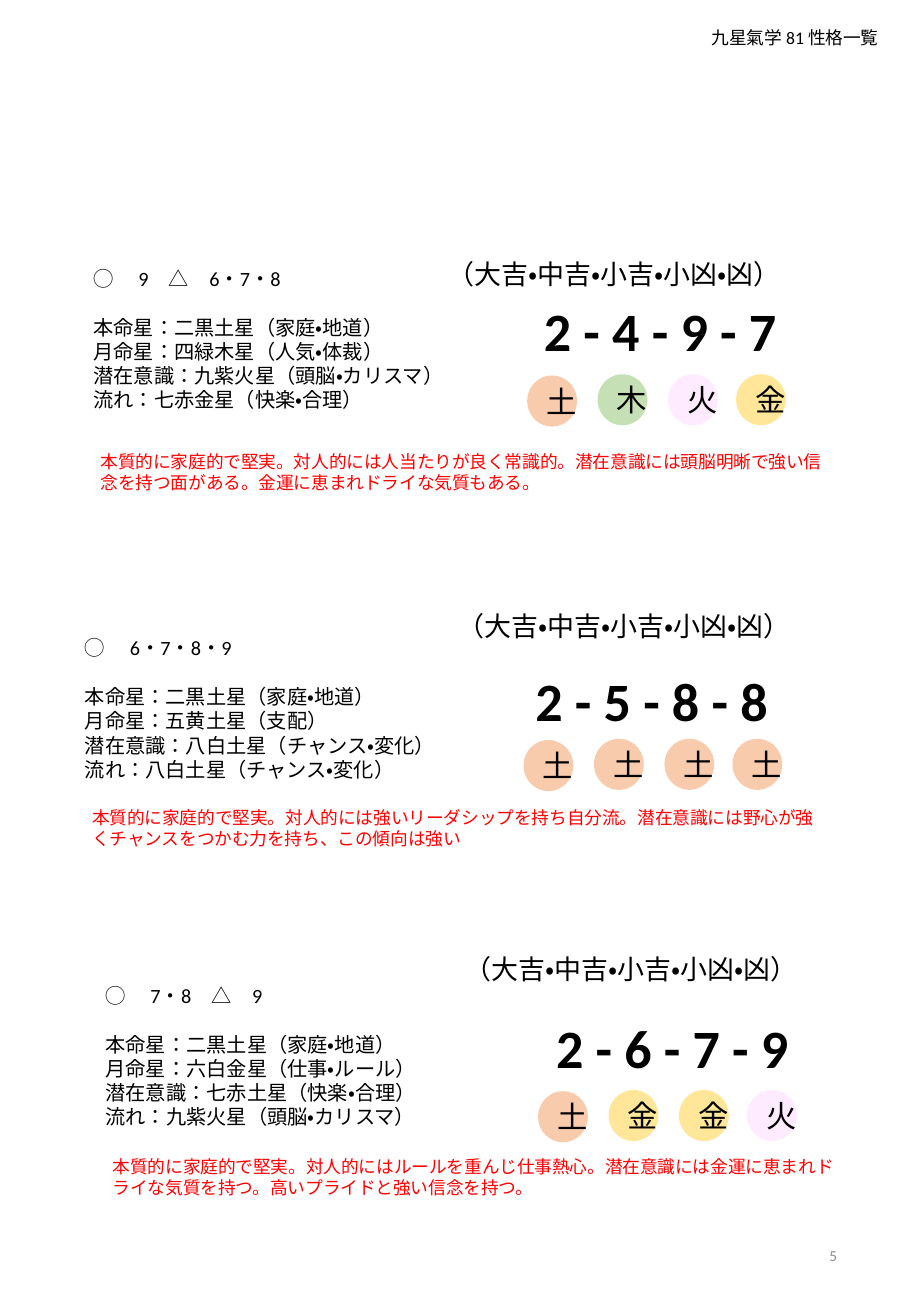
from collections import namedtuple

from pptx import Presentation
from pptx.dml.color import RGBColor
from pptx.enum.lang import MSO_LANGUAGE_ID as Language
from pptx.enum.shapes import MSO_SHAPE as Preset
from pptx.enum.text import MSO_ANCHOR as Anchor, MSO_AUTO_SIZE as AutoSize, PP_ALIGN as Align
from pptx.util import Emu, Pt

PX = 9144
BLACK = RGBColor(0x00, 0x00, 0x00)
RED = RGBColor(0xFF, 0x00, 0x00)
GRAY = RGBColor(0x8C, 0x8C, 0x8C)
ELEMENT_COLORS = {
    "土": RGBColor(0xF8, 0xCB, 0xAD),
    "木": RGBColor(0xC5, 0xE0, 0xB4),
    "火": RGBColor(0xFE, 0xEB, 0xFF),
    "金": RGBColor(0xFF, 0xE6, 0x99),
}
CIRCLE_OFFSETS = ((0, 1), (58, 0), (116, 0), (172, 0))
LUCK = "（大吉・中吉・小吉・小凶・凶）"

Reading = namedtuple("Reading", "left top luck_at circles_at summary_top match stars numbers elements summary")

READINGS = (
    Reading(
        67, 214, (359, 207), (434, 308), 366,
        "◯　 9　△　6・7・8",
        ("本命星：二黒土星（家庭・地道）", "月命星：四緑木星（人気・体裁）",
         "潜在意識：九紫火星（頭脳・カリスマ）", "流れ：七赤金星（快楽・合理）"),
        "2 - 4 - 9 - 7", "土木火金",
        "本質的に家庭的で堅実。対人的には人当たりが良く常識的。潜在意識には頭脳明晰で強い信念を持つ面がある。"
        "金運に恵まれドライな気質もある。",
    ),
    Reading(
        60, 518, (367, 497), (431, 608), 659,
        "◯　 6・7・8・9",
        ("本命星：二黒土星（家庭・地道）", "月命星：五黄土星（支配）",
         "潜在意識：八白土星（チャンス・変化）", "流れ：八白土星（チャンス・変化）"),
        "2 - 5 - 8 - 8", "土土土土",
        "本質的に家庭的で堅実。対人的には強いリーダシップを持ち自分流。潜在意識には野心が強くチャンスをつかむ力を持ち、"
        "この傾向は強い",
    ),
    Reading(
        77, 804, (373, 779), (443, 897), 946,
        "◯　 7・8　△　9",
        ("本命星：二黒土星（家庭・地道）", "月命星：六白金星（仕事・ルール）",
         "潜在意識：七赤土星（快楽・合理）", "流れ：九紫火星（頭脳・カリスマ）"),
        "2 - 6 - 7 - 9", "土金金火",
        "本質的に家庭的で堅実。対人的にはルールを重んじ仕事熱心。潜在意識には金運に恵まれドライな気質を持つ。"
        "高いプライドと強い信念を持つ。",
    ),
)


def px(*lengths):
    return [Emu(length * PX) for length in lengths]


def write(para, text, size, color=BLACK, bold=False, align=Align.LEFT):
    para.alignment = align
    span = para.add_run()
    span.text = text
    font = span.font
    font.name = "Calibri"
    font.size = Pt(size)
    font.bold = bold
    font.color.rgb = color
    font.language_id = Language.JAPANESE


def add_text(shapes, area, lines, size, color=BLACK, bold=False, align=Align.LEFT, anchor=Anchor.TOP):
    box = shapes.add_textbox(*px(*area))
    frame = box.text_frame
    frame.word_wrap = True
    frame.vertical_anchor = anchor
    for index, line in enumerate(lines):
        para = frame.add_paragraph() if index else frame.paragraphs[0]
        write(para, line, size, color, bold, align)
    return box


def add_circle(shapes, left, top, element):
    circle = shapes.add_shape(Preset.OVAL, *px(left, top, 41, 42))
    circle.shadow.inherit = False
    circle.fill.solid()
    circle.fill.fore_color.rgb = ELEMENT_COLORS[element]
    circle.line.fill.background()
    circle.text_frame.vertical_anchor = Anchor.MIDDLE
    write(circle.text_frame.paragraphs[0], element, 18, align=Align.CENTER)


def add_reading(page, reading):
    shapes = page.shapes.add_group_shape().shapes
    left, top = reading.left, reading.top
    profile = add_text(shapes, (left, top, 335, 131), (reading.match, *reading.stars), 12)
    profile.text_frame.paragraphs[0].space_after = Pt(14.5)
    add_text(shapes, (left + 371, top + 26, 252, 64), [reading.numbers], 32, bold=True)
    circles_left, circles_top = reading.circles_at
    for element, (right, down) in zip(reading.elements, CIRCLE_OFFSETS):
        add_circle(shapes, circles_left + right, circles_top + down, element)
    add_text(shapes, (left + 6, reading.summary_top, 626, 45), [reading.summary], 10.5, RED)
    add_text(shapes, (*reading.luck_at, 357, 37), [LUCK], 16)


def set_title(page, text):
    title = page.shapes.title
    title.left, title.top, title.width, title.height = px(576, 17, 160, 28)
    frame = title.text_frame
    frame.auto_size = AutoSize.NONE
    frame.word_wrap = True
    frame.vertical_anchor = Anchor.TOP
    write(frame.paragraphs[0], text, 10.5)


def main():
    deck = Presentation()
    deck.slide_width, deck.slide_height = px(750, 1083)
    page = deck.slides.add_slide(deck.slide_layouts[5])
    set_title(page, "九星氣学 81 性格一覧")
    for reading in READINGS:
        add_reading(page, reading)
    add_text(page.shapes, (530, 1004, 169, 58), ["5"], 9, GRAY, align=Align.RIGHT, anchor=Anchor.MIDDLE)
    deck.save("out.pptx")


if __name__ == "__main__":
    main()
